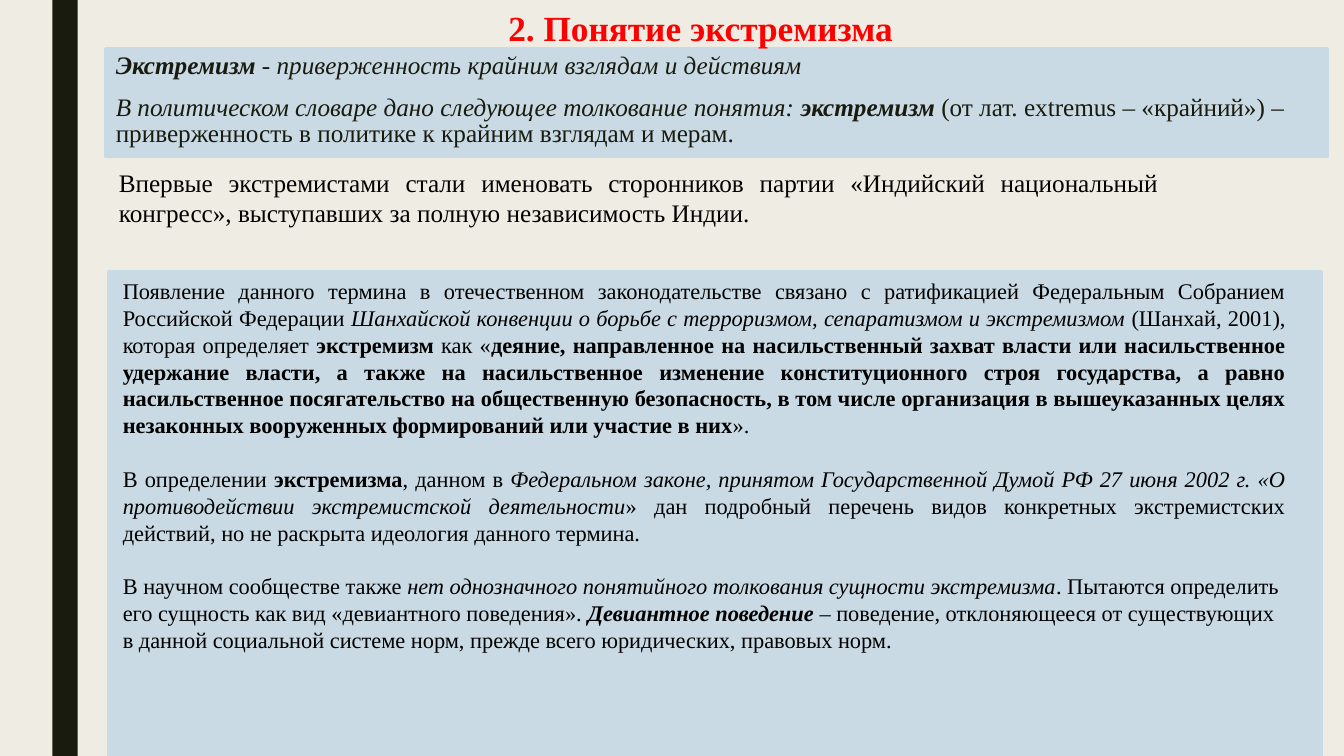
from pptx import Presentation
from pptx.dml.color import RGBColor
from pptx.enum.shapes import MSO_SHAPE
from pptx.enum.text import MSO_ANCHOR, PP_ALIGN
from pptx.util import Inches, Pt

DARK, PANEL, PAPER, RED, BLACK = "191B0E", "C9DAE4", "EFEDE3", "FF0000", "000000"


def color(value):
    return RGBColor.from_string(value)


class SlideBuilder:
    """Holds the text style and the slide being built."""

    font_name = "Times New Roman"

    def __init__(self, slide, background):
        self.slide = slide
        fill = slide.background.fill
        fill.solid()
        fill.fore_color.rgb = color(background)

    def rectangle(self, box, fill, line_width=0):
        shape = self.slide.shapes.add_shape(MSO_SHAPE.RECTANGLE, *map(Inches, box))
        shape.shadow.inherit = False
        shape.fill.solid()
        shape.fill.fore_color.rgb = color(fill)
        if line_width:
            shape.line.color.rgb = color(fill)
            shape.line.width = Pt(line_width)
        else:
            shape.line.fill.background()

    def text(self, box, paragraphs, size, text_color, line_spacing=None,
             before=0, after=0, anchor=MSO_ANCHOR.TOP):
        frame = self.slide.shapes.add_textbox(*map(Inches, box)).text_frame
        frame.word_wrap = True
        frame.vertical_anchor = anchor
        for index, (alignment, runs) in enumerate(paragraphs):
            paragraph = frame.add_paragraph() if index else frame.paragraphs[0]
            paragraph.alignment = alignment
            paragraph.line_spacing = line_spacing
            paragraph.space_before = Pt(before)
            paragraph.space_after = Pt(after)
            for content, style in runs:
                run = paragraph.add_run()
                run.text = content
                run.font.name = self.font_name
                run.font.size = Pt(size)
                run.font.color.rgb = color(text_color)
                run.font.bold = "b" in style
                run.font.italic = "i" in style


def main():
    presentation = Presentation()
    presentation.slide_width = Inches(13.33)
    presentation.slide_height = Inches(7.5)
    slide = presentation.slides.add_slide(presentation.slide_layouts[6])
    builder = SlideBuilder(slide, PAPER)
    justify, left = PP_ALIGN.JUSTIFY, PP_ALIGN.LEFT

    builder.rectangle((0.52, 0, 0.25, 7.5), DARK)
    builder.rectangle((1.08, 2.7, 12.02, 4.8), PANEL, 2.75)
    builder.rectangle((1.05, 0.49, 12.11, 1.06), PANEL, 2.75)

    title = [(PP_ALIGN.CENTER, [("2. Понятие экстремизма", "b")])]
    builder.text((0.85, 0.07, 12.2, 0.46), title, 25.2, RED, 0.89,
                 anchor=MSO_ANCHOR.MIDDLE)

    definition = [
        (justify, [
            ("Экстремизм", "bi"),
            (" - приверженность крайним взглядам и действиям", "i"),
        ]),
        (left, [
            ("В политическом словаре дано следующее толкование понятия: ", "i"),
            ("экстремизм ", "bi"),
            ("(от лат. extremus – «крайний») – приверженность в политике "
             "к крайним взглядам и мерам.", ""),
        ]),
    ]
    builder.text((1.05, 0.49, 11.86, 1.06), definition, 18, DARK, 0.84, 10, 2)

    origin = [(justify, [
        ("Впервые экстремистами стали именовать сторонников партии «Индийский "
         "национальный конгресс», выступавших за полную независимость Индии. ", ""),
    ])]
    builder.text((1.08, 1.61, 10.51, 0.71), origin, 18, BLACK)

    legislation = [
        (justify, [
            ("Появление данного термина в отечественном законодательстве связано "
             "с ратификацией Федеральным Собранием Российской Федерации ", ""),
            ("Шанхайской конвенции о борьбе с терроризмом, сепаратизмом "
             "и экстремизмом ", "i"),
            ("(Шанхай, 2001), которая определяет ", ""),
            ("экстремизм", "b"),
            (" как «", ""),
            ("деяние, направленное на насильственный захват власти или "
             "насильственное удержание власти, а также на насильственное изменение "
             "конституционного строя государства, а равно насильственное "
             "посягательство на общественную безопасность, в том числе организация "
             "в вышеуказанных целях незаконных вооруженных формирований или "
             "участие в них", "b"),
            ("».", ""),
        ]),
        (justify, [
            ("В определении ", ""),
            ("экстремизма", "b"),
            (", данном в ", ""),
            ("Федеральном законе, принятом Государственной Думой РФ 27 июня 2002 г. "
             "«О противодействии экстремистской деятельности", "i"),
            ("» дан подробный перечень видов конкретных экстремистских действий, "
             "но не раскрыта идеология данного термина.", ""),
        ]),
        (left, [
            ("В научном сообществе также ", ""),
            ("нет однозначного понятийного толкования сущности экстремизма", "i"),
            (". Пытаются определить его сущность как вид «девиантного поведения». ", ""),
            ("Девиантное поведение ", "bi"),
            ("– поведение, отклоняющееся от существующих в данной социальной системе "
             "норм, прежде всего юридических, правовых норм.", ""),
        ]),
    ]
    builder.text((1.12, 2.7, 11.73, 4.14), legislation, 16, BLACK, after=19.2)

    presentation.save("out.pptx")


if __name__ == "__main__":
    main()
